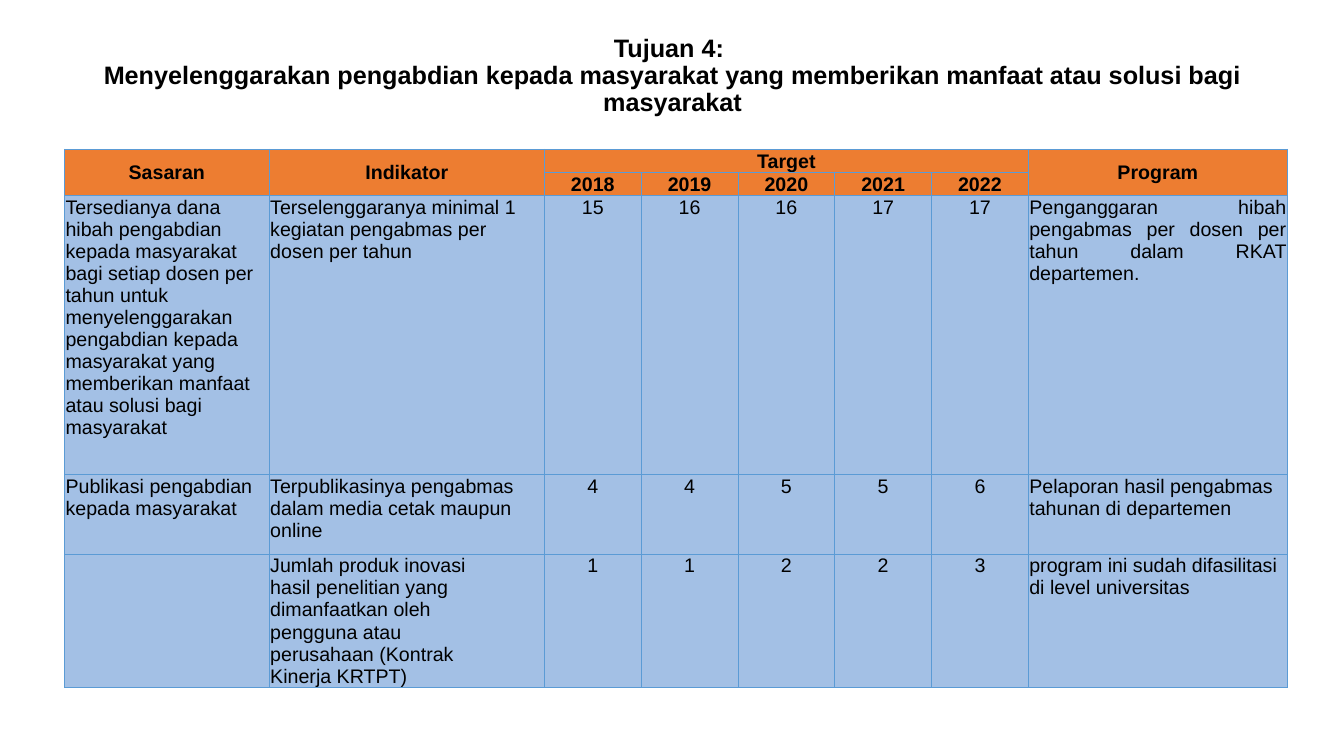
from dataclasses import dataclass

from lxml.etree import SubElement
from pptx import Presentation
from pptx.dml.color import RGBColor
from pptx.enum.text import MSO_ANCHOR, MSO_AUTO_SIZE, PP_ALIGN
from pptx.oxml.ns import qn
from pptx.slide import Slide
from pptx.table import Table, _Cell
from pptx.text.text import _Paragraph
from pptx.util import Inches, Pt

FONT = "Arial"
BLACK, ORANGE, PALE_BLUE, BORDER_BLUE = "000000", "ED7D31", "A3C0E5", "5B9BD5"
COLUMN_WIDTHS = [2.03, 2.73] + [0.96] * 5 + [2.57]
ROW_HEIGHTS = [0.21, 0.21, 2.77, 0.79, 1.19]
YEARS = range(2018, 2023)
FIRST_YEAR, PROGRAM = 2, 7


@dataclass
class Goal:
    """One body row of the target table."""

    sasaran: str
    indikator: str
    targets: list[int]
    program: str
    program_align: PP_ALIGN = PP_ALIGN.LEFT
    indikator_anchor: MSO_ANCHOR = MSO_ANCHOR.TOP


GOALS = [
    Goal(
        "Tersedianya dana hibah pengabdian kepada masyarakat bagi setiap dosen per tahun "
        "untuk menyelenggarakan pengabdian kepada masyarakat yang memberikan manfaat "
        "atau solusi bagi masyarakat",
        "Terselenggaranya minimal 1 kegiatan pengabmas per dosen per tahun",
        [15, 16, 16, 17, 17],
        "Penganggaran hibah pengabmas per dosen per tahun dalam RKAT departemen.",
        program_align=PP_ALIGN.JUSTIFY,
    ),
    Goal(
        "Publikasi pengabdian kepada masyarakat",
        "Terpublikasinya pengabmas dalam media cetak maupun online",
        [4, 4, 5, 5, 6],
        "Pelaporan hasil pengabmas tahunan di departemen",
    ),
    Goal(
        "",
        "Jumlah produk inovasi\nhasil penelitian yang\ndimanfaatkan oleh\n"
        "pengguna atau\nperusahaan (Kontrak\nKinerja KRTPT)",
        [1, 1, 2, 2, 3],
        "program ini sudah difasilitasi di level universitas",
        indikator_anchor=MSO_ANCHOR.MIDDLE,
    ),
]


def color(value: str) -> RGBColor:
    """Turn a hex string into a colour."""
    return RGBColor.from_string(value)


def write(para: _Paragraph, text: str, size: int, bold: bool, align: PP_ALIGN) -> None:
    """Write text run by run, with a line break at each newline."""
    para.alignment = align
    for index, line in enumerate(text.split("\n")):
        if index:
            para.add_line_break()
        span = para.add_run()
        span.text = line
        span.font.name = FONT
        span.font.size = Pt(size)
        span.font.bold = bold
        span.font.color.rgb = color(BLACK)


def style_cell(cell: _Cell, fill: str) -> None:
    """Give a cell its borders, fill and margins."""
    properties = cell._tc.get_or_add_tcPr()
    for side in ("lnL", "lnR", "lnT", "lnB"):
        line = SubElement(properties, qn(f"a:{side}"), w=str(Pt(0.5)))
        solid = SubElement(line, qn("a:solidFill"))
        SubElement(solid, qn("a:srgbClr"), val=BORDER_BLUE)
    cell.fill.solid()
    cell.fill.fore_color.rgb = color(fill)
    cell.margin_left = cell.margin_right = cell.margin_top = Inches(0.01)
    cell.margin_bottom = Inches(0)


def fill_cell(cell: _Cell, text: str, align: PP_ALIGN = PP_ALIGN.LEFT,
              anchor: MSO_ANCHOR = MSO_ANCHOR.TOP, bold: bool = False) -> None:
    """Write the text of one table cell."""
    cell.vertical_anchor = anchor
    if text:
        write(cell.text_frame.paragraphs[0], text, 14, bold, align)


def add_title(page: Slide) -> None:
    """Place and write the title."""
    title = page.shapes.title
    title.left, title.top = Inches(0.92), Inches(0.4)
    title.width, title.height = Inches(11.5), Inches(0.71)
    frame = title.text_frame
    frame.word_wrap = True
    frame.auto_size = MSO_AUTO_SIZE.NONE
    frame.vertical_anchor = MSO_ANCHOR.MIDDLE
    para = frame.paragraphs[0]
    para.line_spacing = 0.9
    write(para, "Tujuan 4: \nMenyelenggarakan pengabdian kepada masyarakat yang "
          "memberikan manfaat atau solusi bagi masyarakat", 18, True, PP_ALIGN.CENTER)


def fill_header(table: Table) -> None:
    """Merge and write the two header rows."""
    for column, label in ((0, "Sasaran"), (1, "Indikator"), (PROGRAM, "Program")):
        table.cell(0, column).merge(table.cell(1, column))
        fill_cell(table.cell(0, column), label, PP_ALIGN.CENTER, MSO_ANCHOR.MIDDLE, True)
    table.cell(0, FIRST_YEAR).merge(table.cell(0, PROGRAM - 1))
    fill_cell(table.cell(0, FIRST_YEAR), "Target", PP_ALIGN.CENTER, MSO_ANCHOR.BOTTOM, True)
    for column, year in enumerate(YEARS, FIRST_YEAR):
        fill_cell(table.cell(1, column), str(year), PP_ALIGN.CENTER, MSO_ANCHOR.BOTTOM, True)


def fill_goal(table: Table, row: int, goal: Goal) -> None:
    """Write one body row."""
    fill_cell(table.cell(row, 0), goal.sasaran)
    fill_cell(table.cell(row, 1), goal.indikator, anchor=goal.indikator_anchor)
    for column, target in enumerate(goal.targets, FIRST_YEAR):
        fill_cell(table.cell(row, column), str(target), PP_ALIGN.CENTER)
    fill_cell(table.cell(row, PROGRAM), goal.program, goal.program_align)


def add_targets(page: Slide) -> None:
    """Add the table of goals and yearly targets."""
    table = page.shapes.add_table(
        len(ROW_HEIGHTS), len(COLUMN_WIDTHS), Inches(0.64), Inches(1.48),
        Inches(sum(COLUMN_WIDTHS)), Inches(sum(ROW_HEIGHTS))).table
    table.first_row = table.horz_banding = False
    for column, width in zip(table.columns, COLUMN_WIDTHS):
        column.width = Inches(width)
    for index, (row, height) in enumerate(zip(table.rows, ROW_HEIGHTS)):
        row.height = Inches(height)
        for cell in row.cells:
            style_cell(cell, ORANGE if index < 2 else PALE_BLUE)
    fill_header(table)
    for row, goal in enumerate(GOALS, 2):
        fill_goal(table, row, goal)


def main() -> None:
    """Build and save the deck."""
    deck = Presentation()
    deck.slide_width, deck.slide_height = Inches(13.33), Inches(7.5)
    page = deck.slides.add_slide(deck.slide_layouts[5])
    add_title(page)
    add_targets(page)
    deck.save("out.pptx")


if __name__ == "__main__":
    main()
